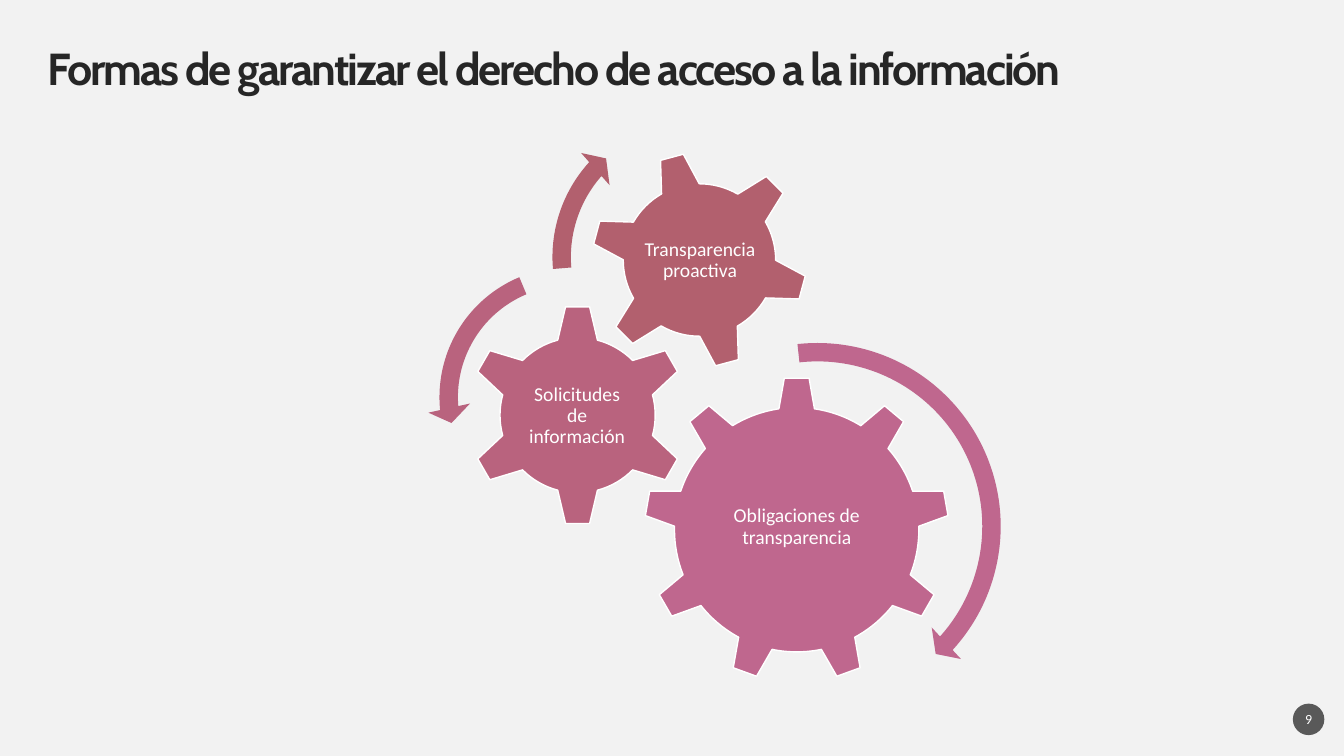
from pptx import Presentation
from pptx.dml.color import RGBColor
from pptx.enum.shapes import MSO_SHAPE as Shape
from pptx.enum.text import MSO_ANCHOR as Anchor, PP_ALIGN as Align
from pptx.util import Pt

COLORS = {
    "background": "F2F2F2",
    "title": "262626",
    "white": "FFFFFF",
    "badge": "595959",
    "pink": "BF678E",
    "rose": "B9637E",
    "red": "B2606E",
}


class SlideBuilder:
    """Holds the style and the current slide; lengths are in points."""

    body_font = "Calibri"
    title_font = "Cabin"

    def __init__(self, slide):
        self.slide = slide
        self.paint(slide.background.fill, "background")

    def paint(self, fill, color):
        fill.solid()
        fill.fore_color.rgb = RGBColor.from_string(COLORS[color])

    def shape(self, kind, box, color, outlined=False):
        shape = self.slide.shapes.add_shape(kind, *map(Pt, box))
        shape.shadow.inherit = False
        self.paint(shape.fill, color)
        if outlined:
            self.paint(shape.line.fill, "white")
            shape.line.width = Pt(1)
        else:
            shape.line.fill.background()
        return shape

    def add_text(self, shape, text, size, color="white", font=None,
                 align=Align.CENTER, inset=0, line_spacing=None):
        frame = shape.text_frame
        frame.word_wrap = True
        frame.vertical_anchor = Anchor.MIDDLE
        frame.margin_left = frame.margin_right = Pt(inset)
        frame.margin_top = frame.margin_bottom = Pt(inset)
        paragraph = frame.paragraphs[0]
        paragraph.alignment = align
        paragraph.line_spacing = line_spacing
        run = paragraph.add_run()
        run.text = text
        run.font.size = Pt(size)
        run.font.name = font or self.body_font
        run.font.color.rgb = RGBColor.from_string(COLORS[color])
        return run

    def text_box(self, box, text, size, **style):
        shape = self.slide.shapes.add_textbox(*map(Pt, box))
        return self.add_text(shape, text, size, line_spacing=0.9, **style)

    def title(self, box, text):
        run = self.text_box(box, text, 32, color="title",
                            font=self.title_font, align=Align.LEFT)
        run.font.bold = True
        run.font._element.set("spc", "-150")

    def gear(self, kind, left, top, size, color, rotation, label, label_box):
        gear = self.shape(kind, (left, top, size, size), color, outlined=True)
        gear.rotation = rotation
        self.text_box(label_box, label, 14, inset=1.5)

    def arc_arrow(self, kind, left, top, size, color, widths, angles):
        """Widths are percentages of the size, angles are degrees."""
        arrow = self.shape(kind, (left, top, size, size), color)
        shaft, head = (width / 100 for width in widths)
        values = [shaft, *(angle * 0.6 for angle in angles), head]
        for index, value in enumerate(values):
            arrow.adjustments[index] = value

    def badge(self, box, text):
        self.add_text(self.shape(Shape.OVAL, box, "badge"), text, 10)


def main():
    presentation = Presentation()
    presentation.slide_width = Pt(960)
    presentation.slide_height = Pt(540)
    slide = presentation.slides.add_slide(presentation.slide_layouts[6])
    builder = SlideBuilder(slide)

    # Gears with their labels
    builder.gear(Shape.GEAR_9, 460, 269.3, 218.2, "pink", 0,
                 "Obligaciones de transparencia", (504, 320.4, 130.3, 112.3))
    builder.gear(Shape.GEAR_6, 333.4, 217.4, 158.4, "rose", 0,
                 "Solicitudes de información", (373, 257.8, 78.5, 78.5))
    builder.gear(Shape.GEAR_6, 421.9, 108, 155.5, "red", 345,
                 "Transparencia proactiva", (456.5, 142.6, 87.1, 87.1))

    # Arrows showing the turn of each gear
    builder.arc_arrow(Shape.CIRCULAR_ARROW, 444.2, 236.2, 279.4, "pink",
                      (4.7, 5.5), (4.98, 42.22, 263.75))
    builder.arc_arrow(Shape.LEFT_CIRCULAR_ARROW, 305.3, 182.2, 203, "rose",
                      (6.5, 7.5), (7.17, 174.82, 247.3))
    builder.arc_arrow(Shape.CIRCULAR_ARROW, 385.9, 74.2, 218.9, "red",
                      (6, 7), (6.57, 221.9, 175.14))

    # Title and page number
    builder.title((33.8, 33.8, 892, 33.8),
                  "Formas de garantizar el derecho de acceso a la información")
    builder.badge((923.5, 502.6, 22.5, 22.5), "9")

    presentation.save("out.pptx")


if __name__ == "__main__":
    main()
